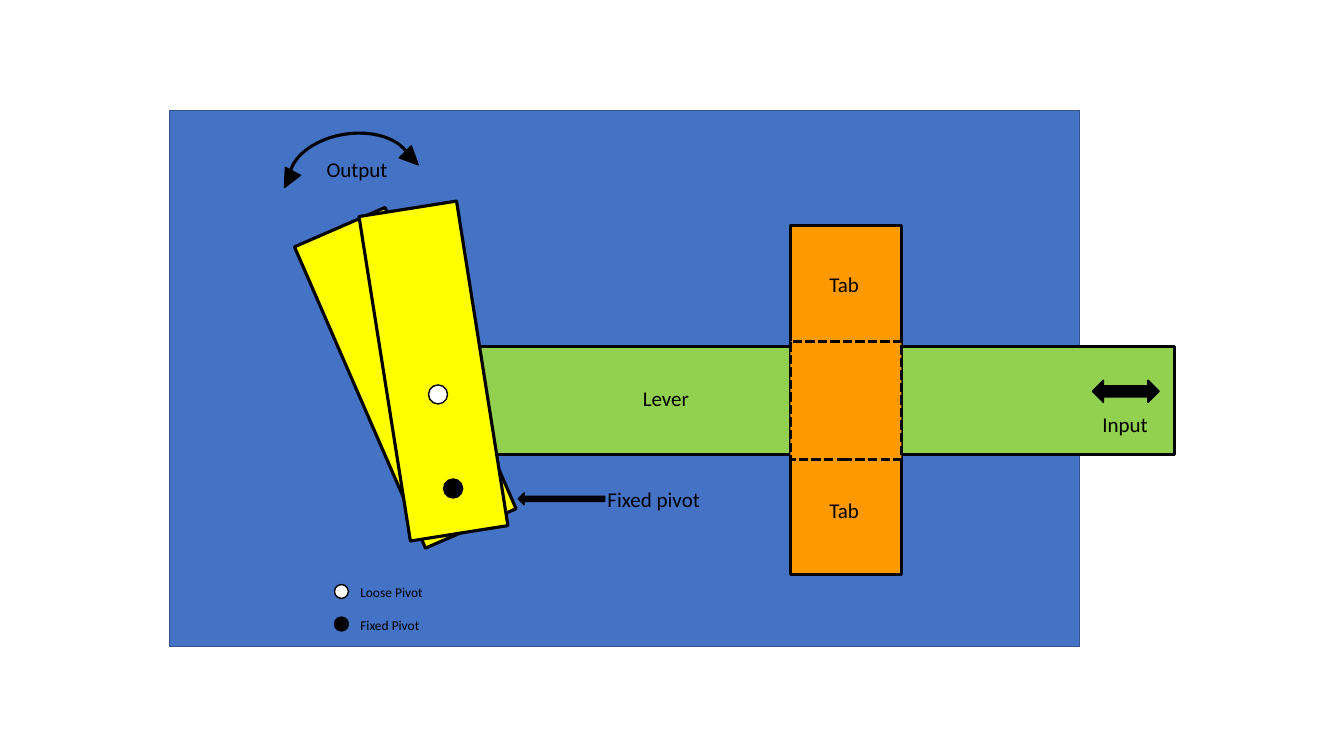
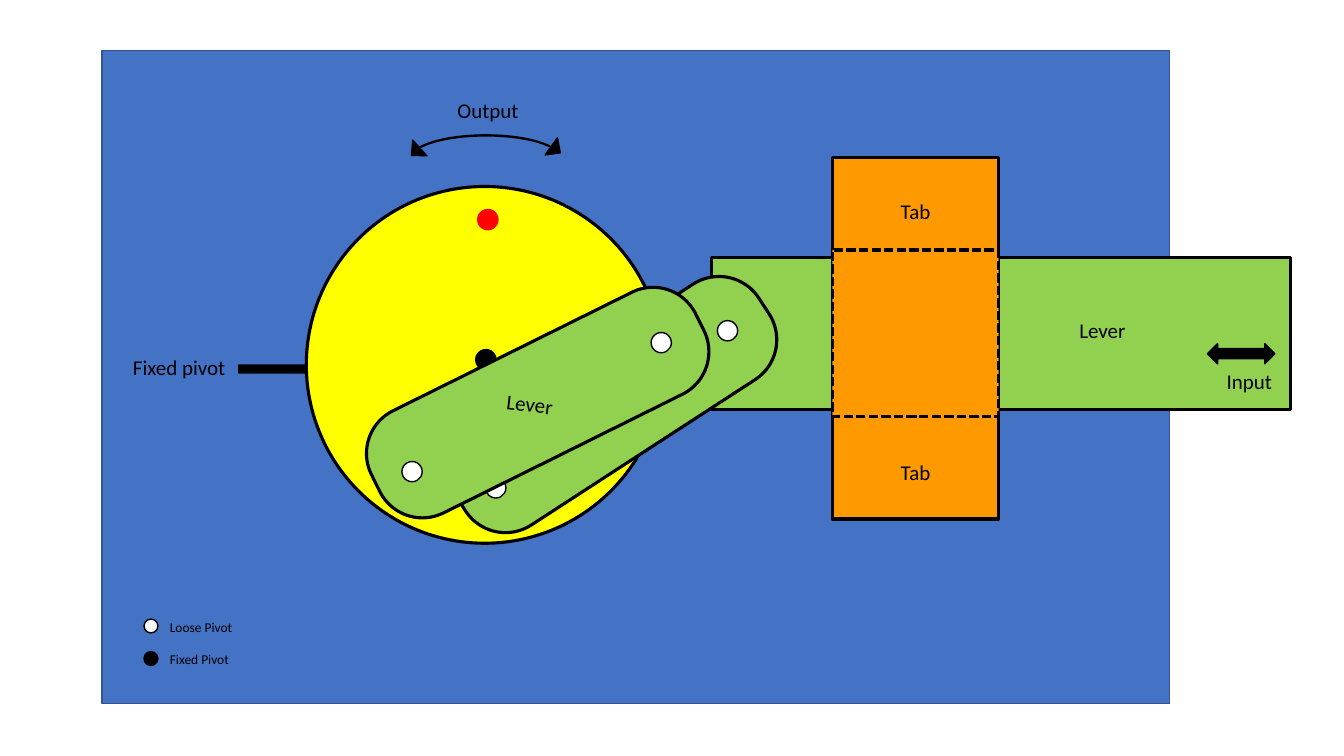
from pptx import Presentation
from pptx.dml.color import RGBColor
from pptx.enum.dml import MSO_LINE_DASH_STYLE as Dash
from pptx.enum.shapes import MSO_SHAPE as Shape
from pptx.util import Cm, Pt

# Shared look
COLORS = {
    "board": "4472C4",
    "board_edge": "325491",
    "lever": "92D050",
    "tab": "FF9900",
    "output": "FFFF00",
    "loose": "FFFFFF",
    "mark": "FF0000",
    "black": "000000",
}
FONT = "Calibri"
THICK = 2.25
LABEL_HEIGHT = 0.89
LEGEND = (("loose", "Loose Pivot"), ("black", "Fixed Pivot"))
LEGEND_PITCH = 0.82
ARC_ADJUSTMENTS = (112.419, 209.75, 0.022)
ARROW_ADJUSTMENTS = (0.427, 0.5)


def rgb(name):
    return RGBColor.from_string(COLORS[name])


def add_part(slide, kind, left, top, width, height, fill="black", edge="black",
             weight=1, rotation=0, adjustments=(), dash=None):
    """Add a filled, outlined preset shape; lengths in centimetres."""
    shape = slide.shapes.add_shape(kind, Cm(left), Cm(top), Cm(width), Cm(height))
    shape.shadow.inherit = False
    shape.rotation = rotation
    shape.fill.solid()
    shape.fill.fore_color.rgb = rgb(fill)
    shape.line.color.rgb = rgb(edge)
    shape.line.width = Pt(weight)
    if dash is not None:
        shape.line.dash_style = dash
    for index, value in enumerate(adjustments):
        shape.adjustments[index] = value
    return shape


def add_label(slide, text, left, top, width=2.5, size=15, rotation=0):
    """Add a one-line text box."""
    box = slide.shapes.add_textbox(Cm(left), Cm(top), Cm(width), Cm(LABEL_HEIGHT))
    box.rotation = rotation
    box.text_frame.word_wrap = True
    run = box.text_frame.paragraphs[0].add_run()
    run.text = text
    run.font.name = FONT
    run.font.size = Pt(size)
    run.font.color.rgb = rgb("black")


def add_board(slide, left, top, width, height):
    add_part(slide, Shape.RECTANGLE, left, top, width, height, "board", "board_edge")


def add_pivot(slide, left, top, size, fill="loose"):
    edge = "black" if fill == "loose" else fill
    add_part(slide, Shape.OVAL, left, top, size, size, fill, edge)


def add_legend(slide, left, top):
    for row, (fill, text) in enumerate(LEGEND):
        row_top = top + row * LEGEND_PITCH
        add_pivot(slide, left, row_top, 0.35, fill)
        add_label(slide, text, left + 0.4, row_top - 0.13, width=3, size=9.6)


def add_lever(slide, box, name_at, arrow, input_at):
    """Add the sliding lever with its name and its input arrow."""
    add_part(slide, Shape.RECTANGLE, *box, fill="lever", weight=THICK)
    add_part(slide, Shape.LEFT_RIGHT_ARROW, *arrow)
    add_label(slide, "Input", *input_at)
    add_label(slide, "Lever", *name_at)


def add_tab(slide, left, top, width, height, slot_top, slot_height, label_left, label_tops):
    """Add the strip over the lever, its dashed slot and both labels."""
    look = {"fill": "tab", "weight": THICK}
    add_part(slide, Shape.RECTANGLE, left, top, width, height, **look)
    add_part(slide, Shape.RECTANGLE, left, slot_top, width, slot_height,
             dash=Dash.SQUARE_DOT, **look)
    for label_top in label_tops:
        add_label(slide, "Tab", label_left, label_top)


def add_output(slide, arc, heads, label_at, rotation=0):
    """Add the curved double arrow; heads hold a box and an angle each."""
    add_part(slide, Shape.BLOCK_ARC, *arc, rotation=rotation, adjustments=ARC_ADJUSTMENTS)
    for box, angle in heads:
        add_part(slide, Shape.ISOSCELES_TRIANGLE, *box, rotation=angle)
    add_label(slide, "Output", *label_at)


def add_pivot_pointer(slide, kind, arrow, label_at):
    add_part(slide, kind, *arrow, adjustments=ARROW_ADJUSTMENTS)
    add_label(slide, "Fixed pivot", *label_at, width=3.5)


def build_swinging_arm(slide):
    add_board(slide, 4.27, 2.79, 22.94, 13.51)
    add_lever(slide, box=(11.63, 8.74, 17.98, 2.72), name_at=(15.95, 9.6),
              arrow=(27.53, 9.58, 1.68, 0.56), input_at=(27.53, 10.24))
    add_tab(slide, 19.92, 5.69, 2.8, 8.79, slot_top=8.6, slot_height=2.97,
            label_left=20.65, label_tops=(6.73, 12.42))
    add_legend(slide, 8.43, 14.73)
    add_output(slide, arc=(7.26, 3.35, 3.15, 2.01), rotation=351.1,
               heads=(((7.06, 4.29, 0.43, 0.46), 207.8), ((10.16, 3.76, 0.43, 0.46), 135.2)),
               label_at=(7.98, 3.81))
    add_pivot_pointer(slide, Shape.LEFT_ARROW, (13.06, 12.42, 2.18, 0.3), (15.06, 12.14))

    # Two positions of the arm, the front one with its pivots
    for left, top, angle in ((8.97, 5.38, 336.5), (9.68, 5.21, 351)):
        add_part(slide, Shape.RECTANGLE, left, top, 2.49, 8.28, "output",
                 weight=THICK, rotation=angle)
    add_pivot(slide, 10.8, 9.7, 0.48)
    add_pivot(slide, 11.18, 12.07, 0.48, "black")


def build_turning_disc(slide):
    add_board(slide, 2.57, 1.27, 26.9, 16.46)
    add_legend(slide, 3.63, 15.6)
    add_output(slide, arc=(10.34, 3.4, 3.81, 1.19),
               heads=(((10.21, 3.68, 0.53, 0.28), 228), ((13.74, 3.63, 0.53, 0.28), 125.8)),
               label_at=(11.28, 2.34))
    add_pivot_pointer(slide, Shape.RIGHT_ARROW, (6.02, 9.07, 3, 0.46), (3.1, 8.81))
    add_lever(slide, box=(17.93, 6.48, 14.6, 3.84), name_at=(26.95, 7.87),
              arrow=(30.43, 8.66, 1.7, 0.51), input_at=(30.66, 9.17))
    add_tab(slide, 20.98, 3.96, 4.19, 9.12, slot_top=6.3, slot_height=4.19,
            label_left=22.45, label_tops=(4.88, 11.46))

    # Disc with its axle and mark
    add_part(slide, Shape.OVAL, 7.72, 4.7, 8.99, 8.99, "output", weight=THICK)
    add_pivot(slide, 11.99, 8.81, 0.51, "black")
    add_pivot(slide, 12.04, 5.28, 0.51, "mark")

    # Two positions of the connecting lever, each with its pivots
    links = (
        (10.87, 8.76, 327, ((18.08, 8.08), (12.24, 12.04))),
        (8.99, 8.71, 333.6, ((16.41, 8.38), (10.13, 11.63))),
    )
    for left, top, angle, pivots in links:
        add_part(slide, Shape.ROUNDED_RECTANGLE, left, top, 9.12, 2.87, "lever",
                 weight=THICK, rotation=angle, adjustments=(0.418,))
        for pivot in pivots:
            add_pivot(slide, *pivot, 0.51)
    add_label(slide, "Lever", 12.52, 9.75, width=1.9, rotation=6.7)


def main():
    presentation = Presentation()
    presentation.slide_width = Cm(33.87)
    presentation.slide_height = Cm(19.05)
    blank_layout = presentation.slide_layouts[6]
    for build in (build_swinging_arm, build_turning_disc):
        build(presentation.slides.add_slide(blank_layout))
    presentation.save("out.pptx")


if __name__ == "__main__":
    main()
